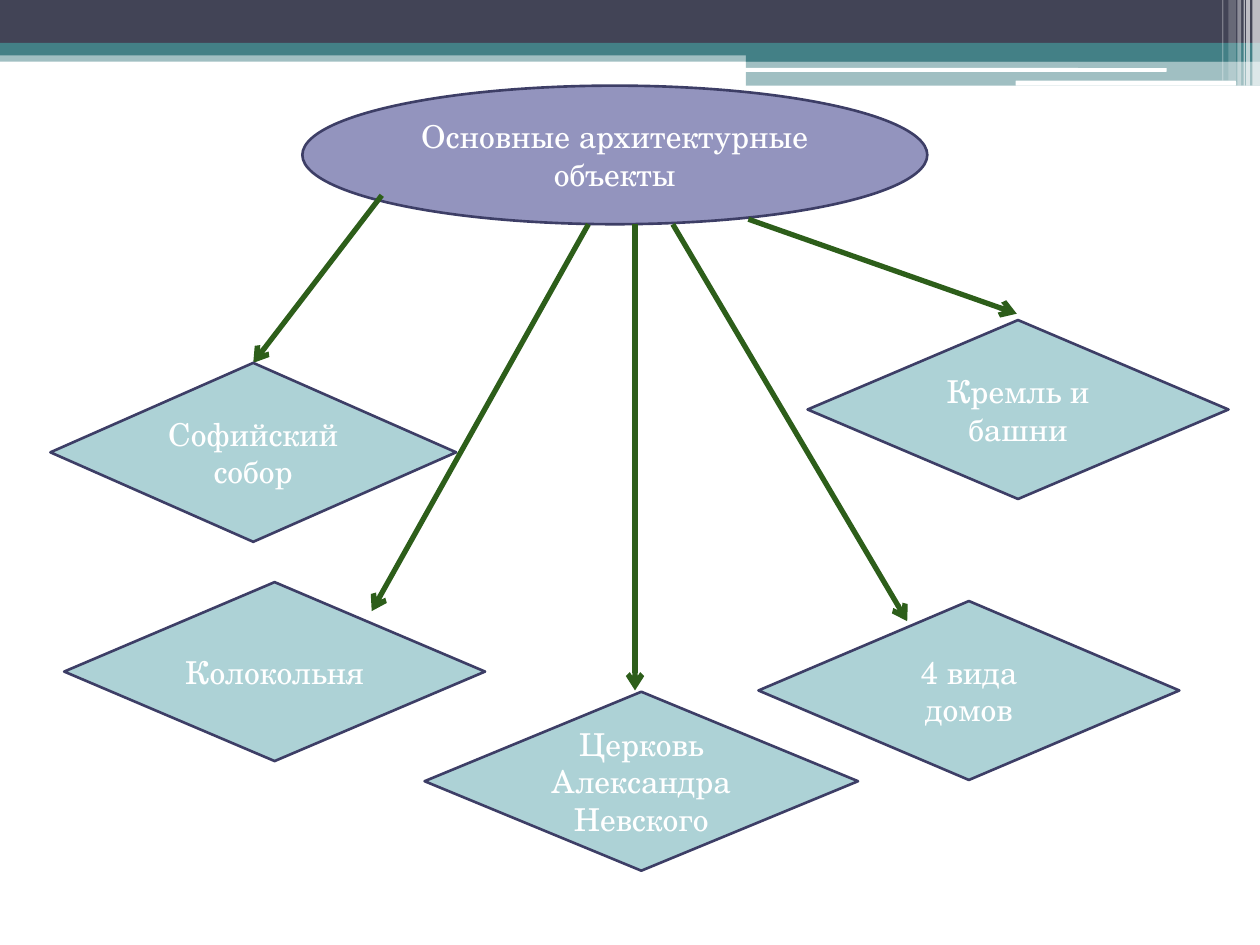
"""Build a slide with a diagram of the main architectural landmarks."""
from lxml import etree
from pptx import Presentation, util as u
from pptx.dml.color import RGBColor
from pptx.enum import shapes, text
from pptx.oxml.ns import qn

COLORS = {"navy": "424456", "teal": "438086", "white": "FFFFFF", "lilac": "9394BE",
          "aqua": "ADD2D6", "outline": "3D3E66", "green": "2D5E1A"}
SHAPE = shapes.MSO_SHAPE


class Deck:
    """Hold the style and the current slide."""

    def __init__(self, font="TeX Gyre Schola", size=18):
        self.font, self.size = font, u.Pt(size)
        self.prs = Presentation()
        self.prs.slide_width, self.prs.slide_height = u.Inches(10), u.Inches(7.5)
        self.s = self.prs.slides.add_slide(self.prs.slide_layouts[6])

    def color(self, name):
        """Return the named colour."""
        return RGBColor.from_string(COLORS[name])

    def shape(self, kind, box, fill):
        """Add a filled shape without shadow."""
        sp = self.s.shapes.add_shape(kind, *map(u.Inches, box))
        sp.shadow.inherit = False
        sp.fill.solid()
        sp.fill.fore_color.rgb = self.color(fill)
        return sp

    def band(self, box, fill, alpha=100, kind=SHAPE.RECTANGLE):
        """Add a borderless bar with the given opacity in percent."""
        sp = self.shape(kind, box, fill)
        sp.line.fill.background()
        if alpha < 100:
            clr = sp.fill._xPr.find(".//" + qn("a:srgbClr"))
            etree.SubElement(clr, qn("a:alpha"), val=str(alpha * 1000))

    def node(self, kind, box, fill, label):
        """Add an outlined shape with a centred label."""
        sp = self.shape(kind, box, fill)
        sp.line.color.rgb = self.color("outline")
        sp.line.width = u.Pt(1.5)
        tf = sp.text_frame
        tf.word_wrap = True
        tf.vertical_anchor = text.MSO_ANCHOR.MIDDLE
        p = tf.paragraphs[0]
        p.text = label
        p.alignment = text.PP_ALIGN.CENTER
        p.font.name, p.font.size = self.font, self.size
        p.font.color.rgb = self.color("white")

    def arrow(self, start, end):
        """Add a line with an open arrowhead at its end."""
        ln = self.s.shapes.add_connector(shapes.MSO_CONNECTOR.STRAIGHT,
                                         *map(u.Inches, start + end))
        ln.line.color.rgb = self.color("green")
        ln.line.width = u.Pt(3)
        etree.SubElement(ln.line._get_or_add_ln(), qn("a:tailEnd"), type="arrow")
        etree.SubElement(ln._element.spPr, qn("a:effectLst"))


BANDS = [
    ((0, 0.4, 10, 0.09), "teal", 50),
    ((0, 0, 10, 0.34), "navy", 100),
    ((0, 0.34, 10, 0.1), "teal", 100),
    ((5.92, 0.39, 4.08, 0.1), "teal", 100),
    ((5.92, 0.48, 4.08, 0.2), "teal", 50),
]
SLOTS = [(5.91, 0.54, 3.35, 0.03), (8.06, 0.64, 1.75, 0.04)]
STRIPES = [(9.94, 0.06, 0.68, 65), (9.89, 0.03, 0.68, 65), (9.87, 0.01, 0.68, 60),
           (9.82, 0.03, 0.68, 40), (9.75, 0.06, 0.64, 20), (9.7, 0.01, 0.64, 30)]
LANDMARKS = [
    ("Софийский собор", (0.4, 2.88, 3.22), (3.03, 1.55), (2.01, 2.88)),
    ("Колокольня", (0.51, 4.62, 3.34), (4.67, 1.78), (2.95, 4.85)),
    ("Церковь Александра Невского", (3.37, 5.49, 3.44), (5.04, 1.78), (5.04, 5.48)),
    ("Кремль и башни", (6.41, 2.54, 3.34), (5.94, 1.74), (8.07, 2.49)),
    ("4 вида домов", (6.02, 4.77, 3.34), (5.34, 1.78), (7.2, 4.93)),
]


def main():
    """Draw the header bands and the diagram, then save."""
    deck = Deck()
    for box, fill, alpha in BANDS:
        deck.band(box, fill, alpha)
    for box in SLOTS:
        deck.band(box, "white", kind=SHAPE.ROUNDED_RECTANGLE)
    for left, width, height, alpha in STRIPES:
        deck.band((left, 0, width, height), "white", alpha)
    deck.node(SHAPE.OVAL, (2.4, 0.68, 4.96, 1.1), "lilac", "Основные архитектурные объекты")
    for label, place, start, end in LANDMARKS:
        deck.arrow(start, end)
        deck.node(SHAPE.FLOWCHART_DECISION, place + (1.42,), "aqua", label)
    deck.prs.save("out.pptx")


if __name__ == "__main__":
    main()
